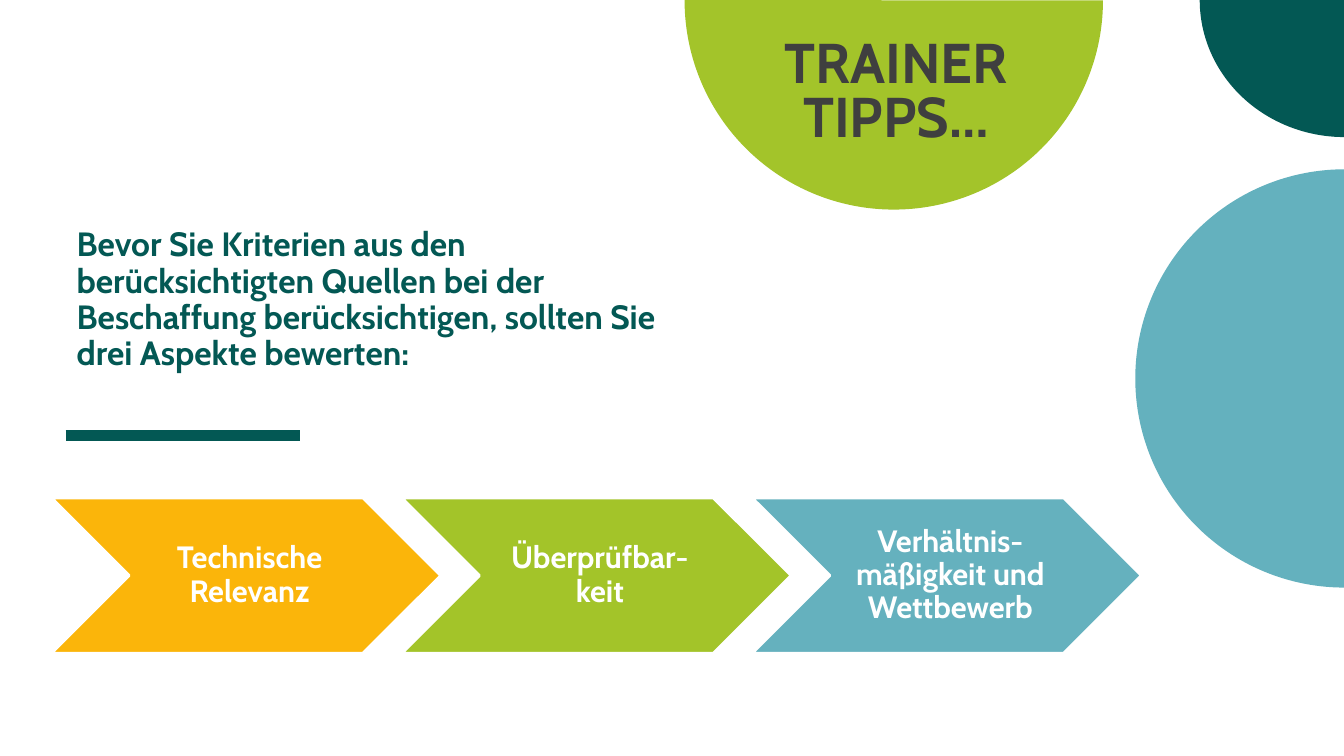
from lxml.etree import SubElement
from pptx import Presentation
from pptx.dml.color import RGBColor
from pptx.enum.shapes import MSO_CONNECTOR as Conn, MSO_SHAPE as Kind
from pptx.enum.text import MSO_ANCHOR as Anchor, PP_ALIGN as Align
from pptx.oxml.ns import qn
from pptx.util import Inches, Pt

WIDE, HIGH = Inches(13.33), Inches(7.5)
FONT = "Cabin"
PINE = RGBColor(0x03, 0x58, 0x54)
LIME = RGBColor(0xA3, 0xC4, 0x2A)
LEAF = RGBColor(0xA3, 0xC4, 0x29)
TEAL = RGBColor(0x64, 0xB1, 0xBE)
AQUA = RGBColor(0x65, 0xB1, 0xBE)
GOLD = RGBColor(0xFB, 0xB5, 0x0A)
GREY = RGBColor(0x3F, 0x3F, 0x3F)
WHITE = RGBColor(0xFF, 0xFF, 0xFF)

STEPS = [
    ("Technische Relevanz", GOLD),
    ("Überprüfbar- keit", LEAF),
    ("Verhältnis- mäßigkeit und Wettbewerb", AQUA),
]
LEFT, TOP, SPAN, TALL, PITCH = 3.83, 65.87, 28.96, 20.53, 26.07


def place(x, y, w, h):
    """Turn percent shares of the slide into lengths."""
    return (int(WIDE * x / 100), int(HIGH * y / 100),
            int(WIDE * w / 100), int(HIGH * h / 100))


def add_form(slide, kind, area, fill, bends, turn=0):
    """Add a flat preset shape without an outline."""
    form = slide.shapes.add_shape(kind, *place(*area))
    form.shadow.inherit = False
    form.fill.solid()
    form.fill.fore_color.rgb = fill
    form.line.fill.background()
    form.rotation = turn
    for index, bend in enumerate(bends):
        form.adjustments[index] = bend
    return form


def add_text(slide, area, words, size, color, anchor, align=Align.CENTER,
             lead=0.9, pads=(0, 0, 0, 0), dent=0):
    """Add a wrapped text box holding one bold run."""
    frame = slide.shapes.add_textbox(*place(*area)).text_frame
    frame.word_wrap = True
    frame.vertical_anchor = anchor
    (frame.margin_left, frame.margin_top,
     frame.margin_right, frame.margin_bottom) = map(Inches, pads)
    para = frame.paragraphs[0]
    para.alignment = align
    para.line_spacing = lead
    if dent:
        props = para._p.get_or_add_pPr()
        props.set("marL", str(Inches(dent)))
        props.set("indent", "0")
    run = para.add_run()
    run.text = words
    run.font.name = FONT
    run.font.size = Pt(size)
    run.font.bold = True
    run.font.color.rgb = color


def add_rule(slide, x, y, w):
    """Add the thick level line."""
    left, top, span, _ = place(x, y, w, 0)
    rule = slide.shapes.add_connector(
        Conn.STRAIGHT, left, top, left + span, top)
    rule.line.color.rgb = PINE
    rule.line.width = Pt(8)
    SubElement(rule._element.spPr, qn("a:effectLst"))


def add_step(slide, index, words, fill):
    """Add one chevron and its label."""
    x = LEFT + index * PITCH
    arrow = add_form(slide, Kind.CHEVRON, (x, TOP, SPAN, TALL), fill, [0.5])
    arrow.line.color.rgb = WHITE
    arrow.line.width = Pt(2)
    add_text(slide, (x + SPAN / 5, TOP, SPAN * 0.6, TALL), words, 22, WHITE,
             Anchor.MIDDLE, pads=(0.1, 0.03, 0.03, 0.03))


def main():
    """Build and save the slide."""
    deck = Presentation()
    deck.slide_width, deck.slide_height = WIDE, HIGH
    slide = deck.slides.add_slide(deck.slide_layouts[6])
    add_rule(slide, 4.88, 57.6, 17.48)
    add_form(slide, Kind.PIE, (89.27, -18.13, 21.53, 36.27), PINE,
             [54.14, 108.26])
    add_form(slide, Kind.PIE, (50.94, -27.6, 31.13, 55.33), LIME,
             [0, 108.52])
    add_form(slide, Kind.PIE, (84.47, 22.4, 31.13, 55.33), TEAL,
             [0, 108.38], 90)
    add_text(slide, (53.19, -11.33, 26.93, 30.93), "TRAINER TIPPS…", 40,
             GREY, Anchor.BOTTOM, lead=0.8)
    add_text(slide, (LEFT, 30.13, 45, 24),
             "Bevor Sie Kriterien aus den berücksichtigten Quellen bei der "
             "Beschaffung berücksichtigen, sollten Sie drei Aspekte bewerten:",
             24, PINE, Anchor.TOP, Align.LEFT, dent=0.25)
    for index, (words, fill) in enumerate(STEPS):
        add_step(slide, index, words, fill)
    deck.save("out.pptx")


if __name__ == "__main__":
    main()
